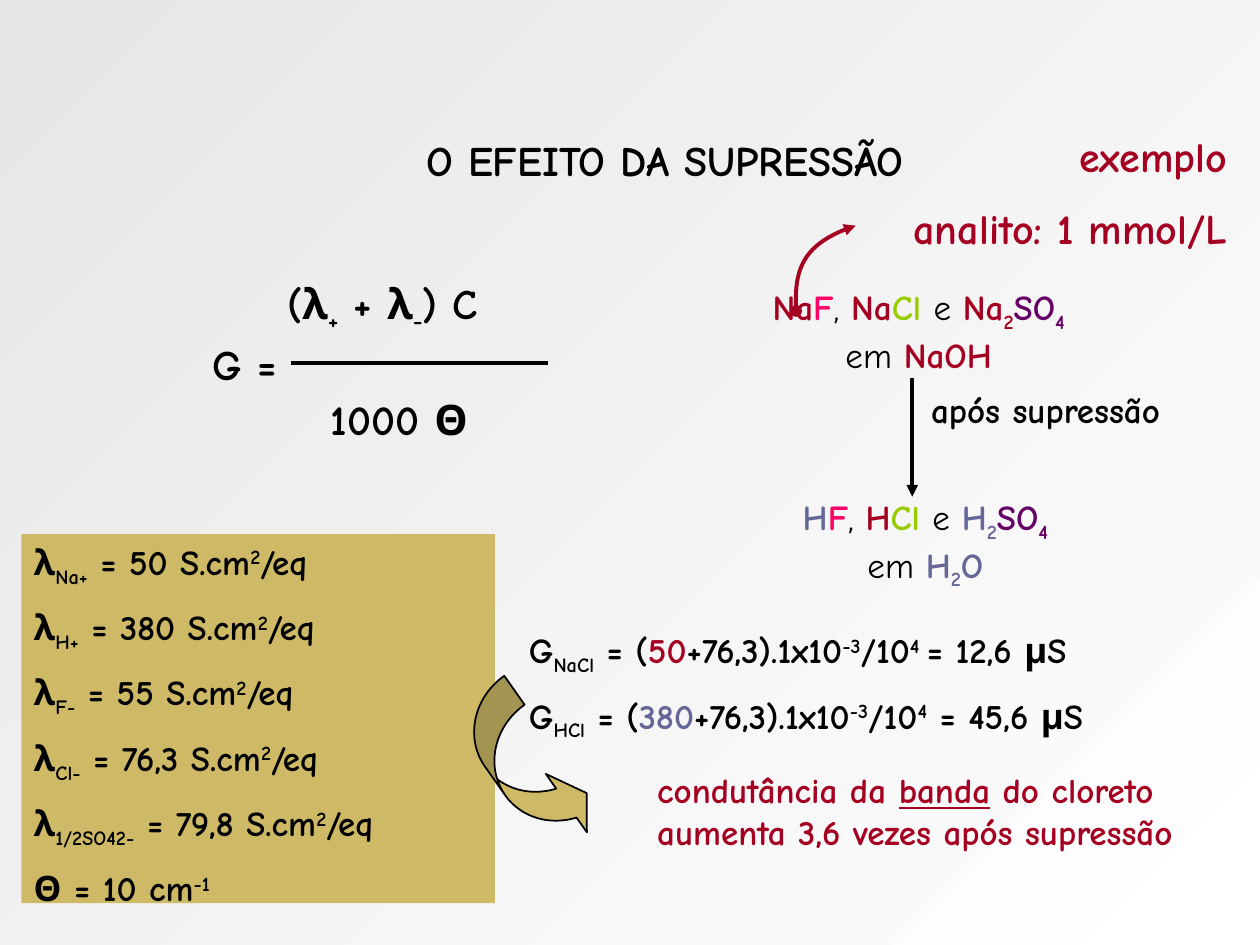
from lxml.etree import SubElement
from pptx import Presentation
from pptx.dml.color import RGBColor
from pptx.enum.shapes import MSO_CONNECTOR, MSO_SHAPE
from pptx.enum.text import MSO_ANCHOR as ANCHOR, PP_ALIGN as ALIGN
from pptx.oxml.ns import qn
from pptx.util import Cm, Pt

BLACK = RGBColor(0x00, 0x00, 0x00)
WHITE = RGBColor(0xFF, 0xFF, 0xFF)
GREY = RGBColor(0xE6, 0xE6, 0xE6)
GOLD = RGBColor(0xCE, 0xB9, 0x66)
RED = RGBColor(0xA5, 0x00, 0x21)
PINK = RGBColor(0xFF, 0x00, 0x66)
GREEN = RGBColor(0x99, 0xCC, 0x00)
PURPLE = RGBColor(0x66, 0x00, 0x66)
SLATE = RGBColor(0x66, 0x66, 0x99)


def run(text, color=None, base=0, **fmt):
    return text, color, base, fmt


def sub(text, color=None):
    return run(text, color, -25)


def sup(text):
    return run(text, base=30)


def write(tf, paragraphs, size=20, color=BLACK, align=ALIGN.LEFT,
          before=10, indents=()):
    for i, runs in enumerate(paragraphs):
        p = tf.add_paragraph() if i else tf.paragraphs[0]
        p.alignment, p.space_before = align, Pt(before)
        if indents:
            p._p.get_or_add_pPr().set("marL", str(Cm(indents[i])))
        for item in runs:
            text, run_color, base, fmt = run(item) if isinstance(item, str) else item
            r = p.add_run()
            r.text = text
            values = {"name": "Comic Neue", "size": Pt(size), "bold": True, **fmt}
            for name, value in values.items():
                setattr(r.font, name, value)
            r.font.color.rgb = run_color or color
            if base:
                r._r.get_or_add_rPr().set("baseline", str(base * 1000))


def add_text(s, box, paragraphs, anchor=ANCHOR.TOP, **style):
    tf = s.shapes.add_textbox(*map(Cm, box)).text_frame
    tf.word_wrap, tf.vertical_anchor = True, anchor
    write(tf, paragraphs, **style)


def add_block(s, kind, box, line=None):
    sp = s.shapes.add_shape(kind, *map(Cm, box))
    sp.shadow.inherit = False
    sp.fill.solid()
    sp.fill.fore_color.rgb = GOLD
    if line:
        sp.line.color.rgb, sp.line.width = line, Pt(1)
    else:
        sp.line.fill.background()
    return sp


def style_line(sp, color, **ends):
    sp.line.color.rgb, sp.line.width = color, Pt(2.25)
    for end, kind in ends.items():
        SubElement(sp.line._get_or_add_ln(), qn(f"a:{end}End"), type=kind)


def add_line(s, points, **ends):
    cx = s.shapes.add_connector(MSO_CONNECTOR.STRAIGHT, *map(Cm, points))
    style_line(cx, BLACK, **ends)
    SubElement(cx._element.spPr, qn("a:effectLst"))


def add_curve(s, controls, color, steps=24):
    def point(t):
        weights = ((1 - t) ** 3, 3 * t * (1 - t) ** 2, 3 * t * t * (1 - t), t ** 3)
        return tuple(Cm(sum(w * v for w, v in zip(weights, axis)))
                     for axis in zip(*controls))

    start, *rest = [point(i / steps) for i in range(steps + 1)]
    fb = s.shapes.build_freeform(*start)
    fb.add_line_segments(rest, close=False)
    sp = fb.convert_to_shape()
    sp.shadow.inherit = False
    sp.fill.background()
    style_line(sp, color, head="oval", tail="triangle")


def set_background(s):
    fill = s.background.fill
    fill.gradient()
    fill.gradient_angle = 135
    for stop, color, position in zip(fill.gradient_stops, (WHITE, GREY), (0, 1)):
        stop.color.rgb, stop.position = color, position


def add_formula(s):
    add_text(s, (4.04, 5.46, 7.52, 3.51),
             [["(λ", sub("+"), " + λ", sub("-"), ") C"], ["G ="], ["1000 Θ"]],
             size=24, before=2.4, indents=(1.5, 0, 2.38))
    add_line(s, (5.87, 7.32, 11.05, 7.32))


def add_constants(s):
    ions = (("Na+", "50"), ("H+", "380"), ("F-", "55"),
            ("Cl-", "76,3"), ("1/2SO42-", "79,8"))
    rows = [["λ", sub(ion), f" = {value} S.cm", sup("2"), "/eq"]
            for ion, value in ions]
    tf = add_block(s, MSO_SHAPE.RECTANGLE, (0.43, 10.77, 9.55, 7.44)).text_frame
    tf.word_wrap, tf.vertical_anchor = True, ANCHOR.TOP
    write(tf, rows + [["Θ = 10 cm", sup("-1")]])


def add_conductances(s):
    rows = [["G", sub(salt), " = (", run(cation, color), "+76,3).1x10", sup("-3"),
             "/10", sup(power), f"{equals} {result} μS"]
            for salt, cation, color, power, equals, result in (
                ("NaCl", "50", RED, "4 ", "=", "12,6"),
                ("HCl", "380", SLATE, "4", " =", "45,6"))]
    add_text(s, (10.41, 12.55, 14.99, 3.63), rows)
    arrow = add_block(s, MSO_SHAPE.CURVED_LEFT_ARROW, (9.96, 13.69, 1.37, 3.61), BLACK)
    for i, value in enumerate((0.52, 1.05, 0.33)):
        arrow.adjustments[i] = value
    arrow.rotation = 324.9
    arrow._element.spPr.xfrm.set("flipH", "1")


def add_analytes(s, box, cation, color, solvent):
    add_text(s, box, [[
        run(cation, color), run("F", PINK), run(", ", bold=False),
        run(cation, RED), run("Cl ", GREEN), run("e ", bold=False),
        run(cation, color), sub("2", color), run("SO", PURPLE), sub("4", PURPLE),
        run(" em ", bold=False), *solvent]], align=ALIGN.CENTER)


def main():
    """Build the suppression effect slide and save it."""
    prs = Presentation()
    prs.slide_width, prs.slide_height = Cm(25.4), Cm(19.05)
    s = prs.slides.add_slide(prs.slide_layouts[6])
    set_background(s)
    add_text(s, (1.65, 1.75, 23.5, 2.92), [["O EFEITO DA SUPRESSÃO"]],
             anchor=ANCHOR.MIDDLE, size=24, align=ALIGN.CENTER, before=0)
    add_formula(s)
    add_constants(s)
    add_conductances(s)
    add_analytes(s, (15.14, 5.64, 6.76, 1.96), "Na", RED, [run("NaOH", RED)])
    add_analytes(s, (15.62, 9.86, 6.07, 1.96), "H", SLATE,
                 [run("H", SLATE), sub("2", SLATE), run("O", SLATE)])
    add_line(s, (18.39, 7.62, 18.39, 10.01), tail="triangle")
    add_text(s, (13, 15.37, 11.18, 2.79),
             [["condutância da ", run("banda", underline=True),
               " do cloreto aumenta 3,6 vezes após supressão"]], color=RED)
    add_text(s, (18.52, 7.7, 5.38, 1.96), [["após supressão"]])
    add_text(s, (15.72, 2.51, 9.27, 2.79), [["exemplo"], ["analito: 1 mmol/L"]],
             size=24, color=RED, align=ALIGN.RIGHT, before=12)
    add_curve(s, ((16.05, 6.27), (16, 5.4), (16.2, 4.9), (17.25, 4.55)), RED)
    prs.save("out.pptx")


if __name__ == "__main__":
    main()
